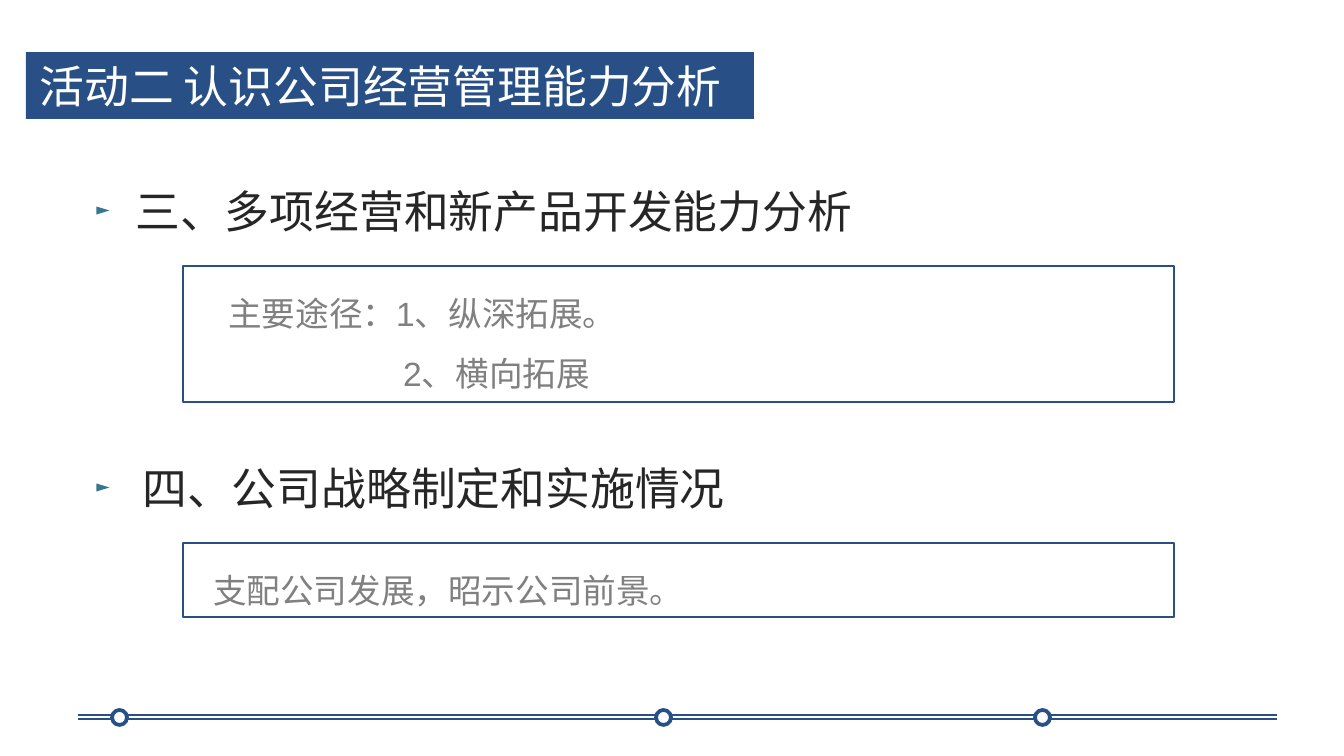
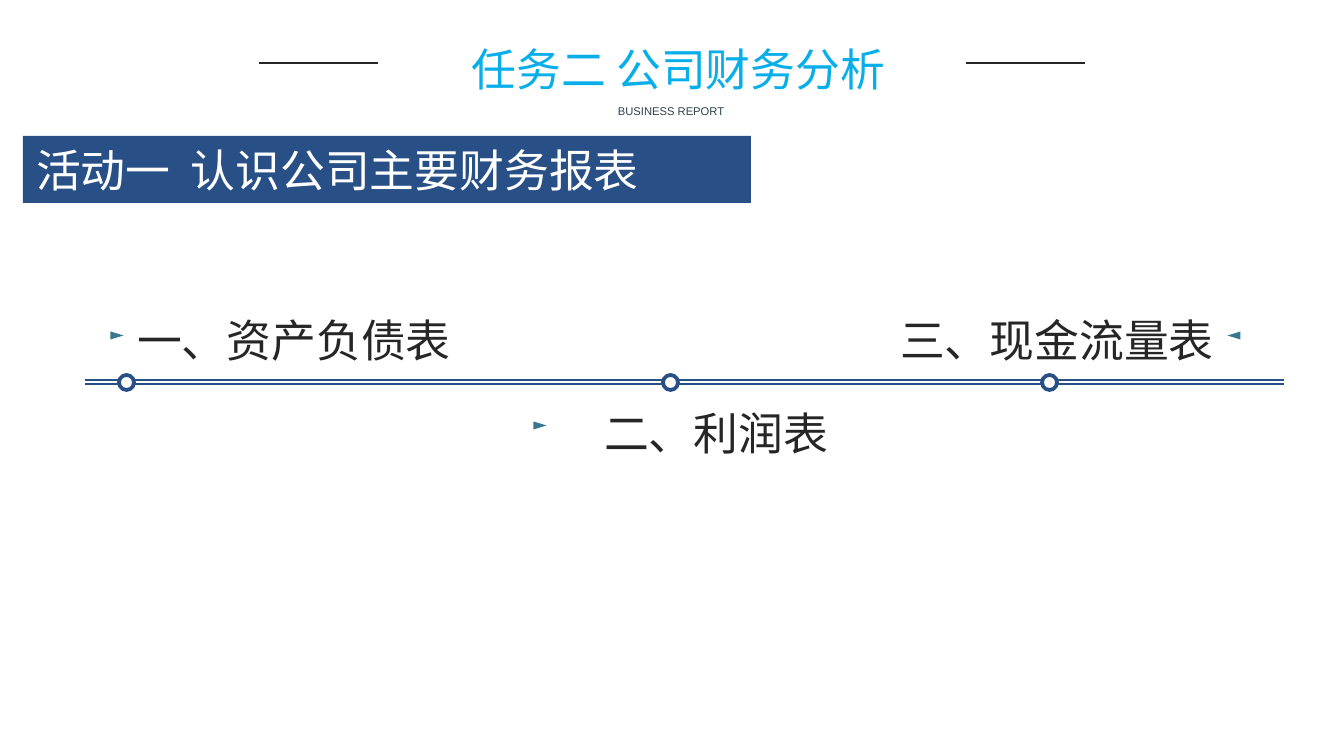
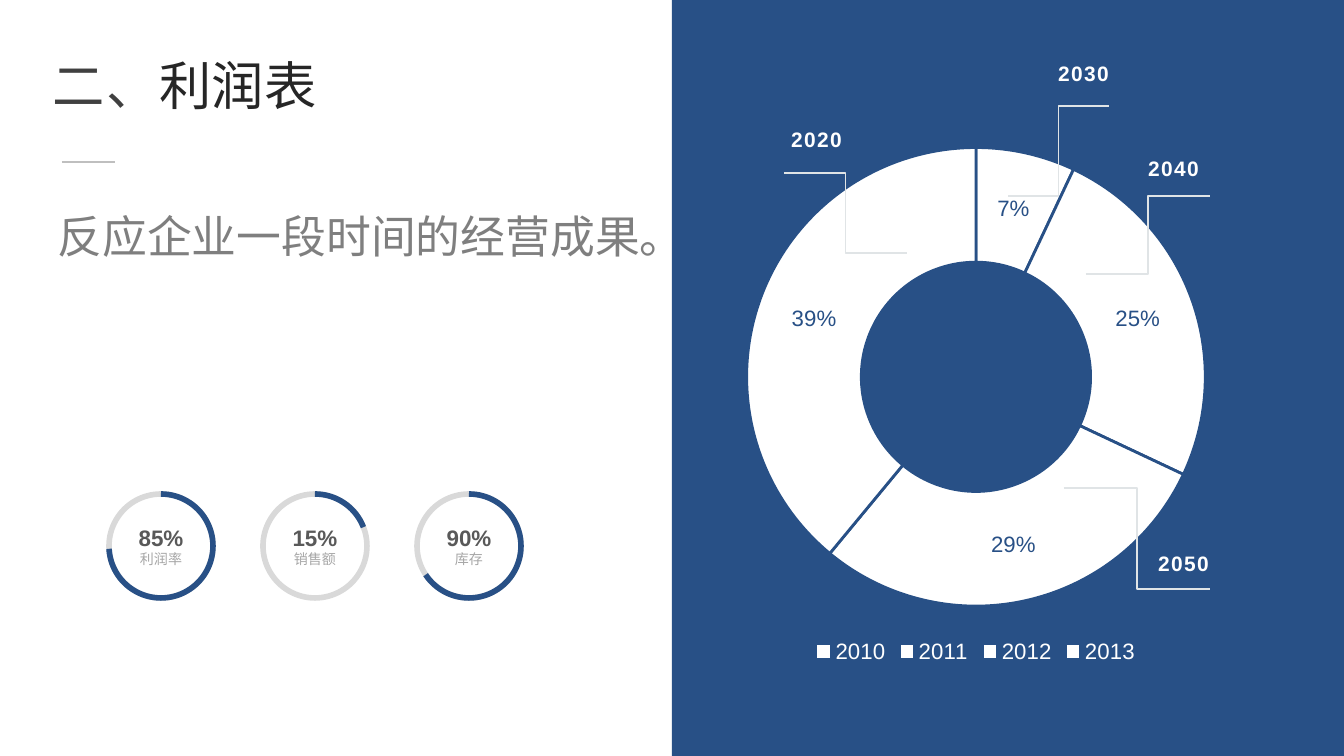
from pptx import Presentation
from pptx.chart.data import CategoryChartData
from pptx.dml.color import RGBColor
from pptx.enum.chart import XL_CHART_TYPE, XL_LEGEND_POSITION
from pptx.enum.shapes import MSO_CONNECTOR, MSO_SHAPE
from pptx.enum.text import MSO_ANCHOR, MSO_AUTO_SIZE, PP_ALIGN
from pptx.oxml.ns import qn
from pptx.util import Pt
from lxml import etree

RECT, OVAL, ARC, TRI = (MSO_SHAPE.RECTANGLE, MSO_SHAPE.OVAL,
                        MSO_SHAPE.ARC, MSO_SHAPE.ISOSCELES_TRIANGLE)
LINE, ELBOW = MSO_CONNECTOR.STRAIGHT, MSO_CONNECTOR.ELBOW
LEFT, MID = PP_ALIGN.LEFT, PP_ALIGN.CENTER
TOP, CORE = MSO_ANCHOR.TOP, MSO_ANCHOR.MIDDLE
FIXED = MSO_AUTO_SIZE.NONE
RING = XL_CHART_TYPE.DOUGHNUT
BELOW = XL_LEGEND_POSITION.BOTTOM

HEX = {
    "navy": "285086", "teal": "377790", "white": "FFFFFF", "ink": "262626",
    "dark": "404040", "slate": "2F414B", "text": "808080", "soft": "7F7F7F",
    "bold": "595959", "pale": "A6A6A6", "rail": "D9D9D9", "rule": "BFBFBF",
    "lead": "E0E4E6", "sky": "08AEEA", "mint": "2AF598",
}
HAN = "Noto Sans CJK SC"
CON = "Roboto Condensed"
FONT = {
    "head": {"size": 24, "name": CON, "color": "ink"},
    "band": {"size": 24, "name": CON, "color": "white"},
    "note": {"size": 18, "name": "Arial", "color": "text"},
    "task": {"size": 24, "name": HAN, "color": "sky"},
    "tag": {"size": 6, "name": "Arial", "color": "slate"},
    "mark": {"size": 28, "name": HAN, "color": "dark", "spc": 80},
    "name": {"size": 28, "name": "Roboto", "color": "ink"},
    "lede": {"size": 24, "name": "Arial", "color": "soft"},
    "rate": {"size": 12, "name": "Arial", "color": "bold", "bold": True},
    "unit": {"size": 7.5, "name": "Arial", "color": "pale"},
    "year": {"size": 11.2, "name": "Arial", "color": "white", "bold": True,
             "spc": 80},
    "key": {"size": 11.9, "name": "Arial", "color": "white"},
    "val": {"size": 11.9, "name": "Arial", "color": "navy"},
}

BAND = (728, 67)
SKILL = "活动二 认识公司经营管理能力分析"
TOPICS = [
    ("三、多项经营和新产品开发能力分析", (122, 177, 802, 67), (99, 204),
     (183, 266, 991, 136), [(32, "主要途径：1、纵深拓展。"), (207, "2、横向拓展")]),
    ("四、公司战略制定和实施情况", (129, 454, 673, 67), (99, 481),
     (183, 543, 991, 74), [(17, "支配公司发展，昭示公司前景。")]),
]

TASK = "任务二 公司财务分析"
SHEETS = "活动一  认识公司主要财务报表"
REPORTS = [
    ("一、资产负债表", (124, 306, 554, 67), (113, 329), 90, True),
    ("二、利润表", (591, 399, 251, 67), (536, 419), 90, False),
    ("三、现金流量表", (887, 306, 340, 67), (1230, 329), 270, False),
]
SPANS = [(0, 391), (258, 575), (532, 1199)]
STOPS = [578, 34, 957]

PROFIT = [("二、", "mark"), ("利润表", "name")]
LEDE = "反应企业一段时间的经营成果。"
RATES = [("85%", "利润率", 106.11), ("15%", "销售额", 203.28),
         ("90%", "库存", 87.86)]
SHARES = {"2010": 0.07, "2011": 0.25, "2012": 0.29, "2013": 0.39}
YEARS = [
    ("2020", (754, 120), (907, 253, 784, 173)),
    ("2030", (1021, 54), (1008, 196, 1109, 106)),
    ("2040", (1111, 149), (1086, 274, 1210, 196)),
    ("2050", (1121, 544), (1064, 488, 1210, 589)),
]


def px(*vals):
    return [round(v * 914400 / 134.4) for v in vals]


def rgb(key):
    return RGBColor.from_string(HEX[key])


def apply(obj, vals):
    for key, val in vals.items():
        setattr(obj, key, val)


def style(font, kind):
    form = dict(FONT[kind])
    form.pop("spc", None)
    font.color.rgb = rgb(form.pop("color"))
    form["size"] = Pt(form["size"])
    apply(font, form)


def write(shape, paras, align=LEFT, anchor=TOP, gap=1.0, wrap=True):
    frame = shape.text_frame
    apply(frame, {"auto_size": FIXED, "word_wrap": wrap,
                  "vertical_anchor": anchor})
    for i, (dent, runs) in enumerate(paras):
        para = frame.add_paragraph() if i else frame.paragraphs[0]
        apply(para, {"alignment": align, "line_spacing": gap,
                     "space_before": Pt(0)})
        props = para._p.get_or_add_pPr()
        props.set("marL", str(px(dent)[0]))
        props.set("indent", "0")
        etree.SubElement(props, qn("a:buNone"))
        for text, kind in runs:
            run = para.add_run()
            run.text = text
            style(run.font, kind)
            props = run._r.get_or_add_rPr()
            etree.SubElement(props, qn("a:ea")).set("typeface", HAN)
            if "spc" in FONT[kind]:
                props.set("spc", str(FONT[kind]["spc"]))


def place(shape, box):
    apply(shape, dict(zip(("left", "top", "width", "height"), px(*box))))
    return shape


def paint(shape, fill=None, line=None, wide=0.75):
    if fill:
        shape.fill.solid()
        shape.fill.fore_color.rgb = rgb(fill)
    else:
        shape.fill.background()
    if line:
        shape.line.color.rgb = rgb(line)
        shape.line.width = Pt(wide)
    else:
        shape.line.fill.background()


def draw(slide, kind, box, fill=None, line=None, wide=0.75, turn=0):
    shape = slide.shapes.add_shape(kind, *px(*box))
    shape.shadow.inherit = False
    shape.rotation = turn
    paint(shape, fill, line, wide)
    return shape


def label(slide, box, text, kind, **form):
    shape = slide.shapes.add_textbox(*px(*box))
    write(shape, [(0, [(text, kind)])], **form)


def link(slide, ends, color, wide=0.75, kind=LINE):
    line = slide.shapes.add_connector(kind, *px(*ends))
    line.line.color.rgb = rgb(color)
    line.line.width = Pt(wide)
    etree.SubElement(line._element.spPr, qn("a:effectLst"))


def arrow(slide, spot, turn=90):
    draw(slide, TRI, (*spot, 8, 13), "teal", turn=turn)


def track(slide, left, top):
    for start, end in SPANS:
        for y in (top, top + 4):
            link(slide, (left + start, y, left + end, y), "navy")
    for x in STOPS:
        draw(slide, OVAL, (left + x, top - 5, 15, 15), "white", "navy", 2)


def skills(deck):
    slide = deck.slides.add_slide(deck.slide_layouts[5])
    title = place(slide.shapes.title, (26, 52, *BAND))
    paint(title, "navy")
    write(title, [(0, [(SKILL, "band")])])
    track(slide, 78, 715)
    for head, spot, tip, box, notes in TOPICS:
        arrow(slide, tip)
        label(slide, spot, head, "head")
        card = draw(slide, RECT, box, "white", "navy")
        write(card, [(dent, [(text, "note")]) for dent, text in notes],
              gap=1.5)


def sheets(deck):
    slide = deck.slides.add_slide(deck.slide_layouts[5])
    title = place(slide.shapes.title, (390, 35, 577, 176))
    write(title, [(0, [(TASK, "task")])], align=MID)
    fill = title.text_frame.paragraphs[0].runs[0].font.fill
    fill.gradient()
    fill.gradient_angle = 315
    for stop, key in zip(fill.gradient_stops, ("sky", "mint")):
        stop.color.rgb = rgb(key)
    for x in (259, 966):
        link(slide, (x, 63, x + 119, 63), "ink")
    label(slide, (591, 98, 160, 27), "BUSINESS REPORT", "tag", align=MID)
    band = draw(slide, RECT, (23, 136, *BAND), "navy")
    write(band, [(0, [(SHEETS, "band")])])
    track(slide, 85, 380)
    for text, box, tip, turn, wrap in REPORTS:
        label(slide, box, text, "head", wrap=wrap)
        arrow(slide, tip, turn)


def donut(slide):
    data = CategoryChartData(number_format="0%")
    data.categories = list(SHARES)
    data.add_series("Series 1", list(SHARES.values()))
    chart = slide.shapes.add_chart(RING, *px(707, 129, 538, 540), data).chart
    apply(chart, {"has_title": False, "has_legend": True})
    style(chart.font, "key")
    apply(chart.legend, {"position": BELOW, "include_in_layout": False})
    style(chart.legend.font, "key")
    plot = chart.plots[0]
    apply(plot, {"vary_by_categories": True, "has_data_labels": True})
    apply(plot.data_labels, {
        "show_value": True, "show_percentage": False,
        "number_format": "0%", "number_format_is_linked": False})
    style(plot.data_labels.font, "val")
    for i in range(len(SHARES)):
        paint(plot.series[0].points[i].format, "white", "navy", 1.5)


def profit(deck):
    slide = deck.slides.add_slide(deck.slide_layouts[1])
    draw(slide, RECT, (672, 0, 672, 756), "navy")
    title = place(slide.shapes.title, (39, 54, 454, 85))
    write(title, [(0, PROFIT)], gap=0.9)
    lede = place(slide.placeholders[1], (44, 175, 628, 95))
    write(lede, [(0, [(LEDE, "lede")])], gap=1.5)
    link(slide, (62, 162, 115, 162), "rule", 1)
    donut(slide)
    for i, (rate, unit, end) in enumerate(RATES):
        box = (109 + 154 * i, 494, 104, 104)
        ring = draw(slide, OVAL, box, line="rail", wide=3)
        apply(ring.text_frame, {"margin_left": 0, "margin_right": 0})
        write(ring, [(0, [(rate, "rate")]), (0, [(unit, "unit")])],
              align=MID, anchor=CORE)
        arc = draw(slide, ARC, box, line="navy", wide=3)
        arc.adjustments[0] = 162
        arc.adjustments[1] = end
    for year, spot, ends in YEARS:
        link(slide, ends, "lead", kind=ELBOW)
        label(slide, (*spot, 125, 43), year, "year", align=MID)


def main():
    deck = Presentation()
    deck.slide_width, deck.slide_height = px(1344, 756)
    for build in (skills, sheets, profit):
        build(deck)
    deck.save("out.pptx")


if __name__ == "__main__":
    main()
